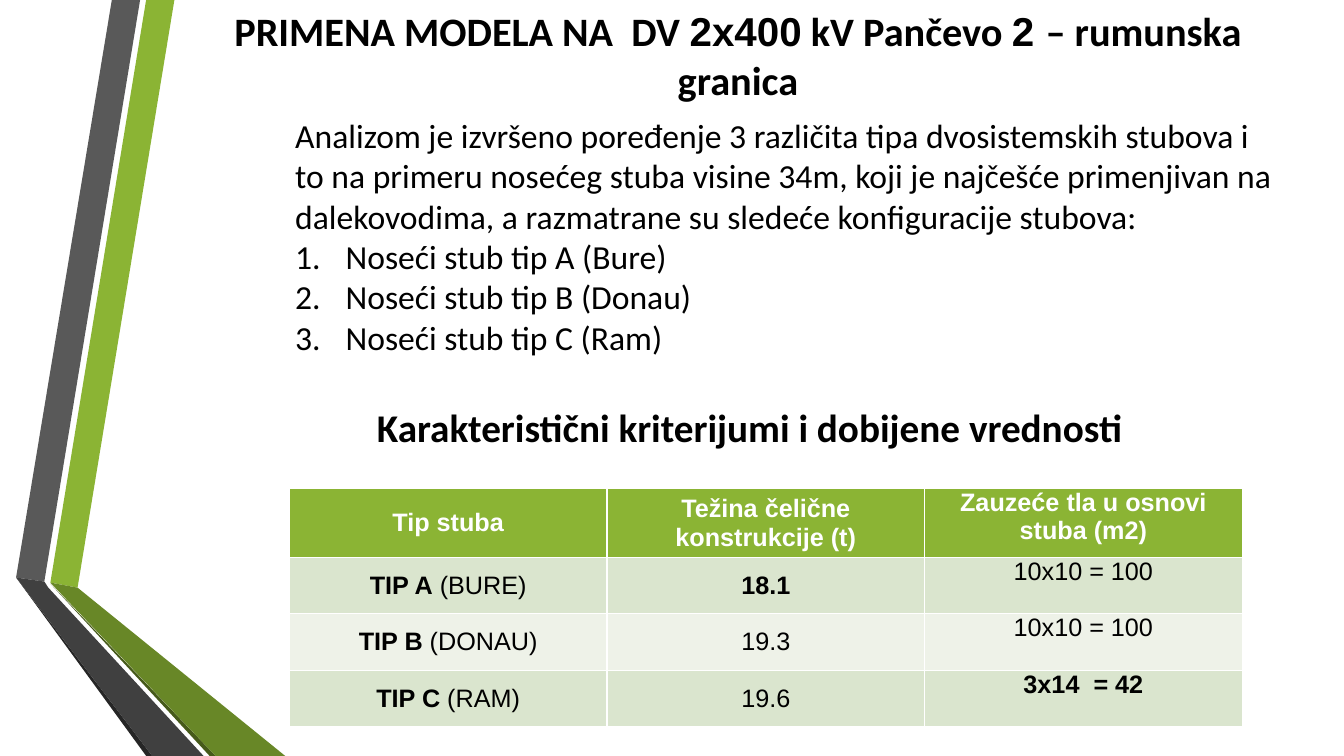
from pptx import Presentation
from pptx.dml.color import RGBColor
from pptx.enum.text import MSO_ANCHOR as Anchor, MSO_AUTO_SIZE as AutoSize, PP_ALIGN as Align
from pptx.util import Pt

PX = 9144
BLACK = RGBColor(0x00, 0x00, 0x00)
WHITE = RGBColor(0xFF, 0xFF, 0xFF)
GREEN = RGBColor(0x8B, 0xB4, 0x34)
LEAF = RGBColor(0x68, 0x87, 0x27)
MOSS = RGBColor(0x46, 0x5A, 0x1A)
GRAY = RGBColor(0x59, 0x59, 0x59)
CHARCOAL = RGBColor(0x40, 0x40, 0x40)
SOOT = RGBColor(0x26, 0x26, 0x26)
BAND_DARK = RGBColor(0xDA, 0xE5, 0xCE)
BAND_LIGHT = RGBColor(0xEE, 0xF2, 0xE8)

RIBBONS = [
    (GREEN, [(50, 578), (77, 583), (173, 0), (145, 0)]),
    (GRAY, [(139, 0), (111, 0), (16, 573), (44, 577)]),
    (SOOT, [(16, 573), (145, 750), (151, 750)]),
    (MOSS, [(50, 579), (208, 750), (214, 750)]),
    (LEAF, [(50, 578), (214, 750), (283, 750), (77, 583)]),
    (CHARCOAL, [(202, 750), (48, 583), (44, 577), (16, 573), (151, 750)]),
]

TITLE = [
    ("PRIMENA MODELA NA  DV ", "Calibri"),
    ("2x400", "Arial"),
    (" kV Pančevo ", "Calibri"),
    ("2 ", "Arial"),
    ("– rumunska granica", "Calibri"),
]

ANALYSIS = [
    "Analizom je izvršeno poređenje 3 različita tipa dvosistemskih stubova i to na "
    "primeru nosećeg stuba visine 34m, koji je najčešće primenjivan na dalekovodima, "
    "a razmatrane su sledeće konfiguracije stubova:",
    "1.\tNoseći stub tip A (Bure)",
    "2.\tNoseći stub tip B (Donau)",
    "3.\tNoseći stub tip C (Ram)",
]

CRITERIA = [
    [[("Tip stuba", True)], [("Težina čelične konstrukcije (t)", True)],
     [("Zauzeće tla u osnovi stuba (m2)", True)]],
    [[("TIP A", True), (" (BURE)", False)], [("18.1", True)], [("10x10 = 100", False)]],
    [[("TIP B", True), (" (DONAU)", False)], [("19.3", False)], [("10x10 = 100", False)]],
    [[("TIP C", True), (" (RAM)", False)], [("19.6", False)], [("3x14  = 42", True)]],
]


def add_ribbon(page, color, points):
    builder = page.shapes.build_freeform(*points[0], scale=PX)
    builder.add_line_segments(points[1:], close=True)
    ribbon = builder.convert_to_shape()
    ribbon.shadow.inherit = False
    ribbon.fill.solid()
    ribbon.fill.fore_color.rgb = color
    ribbon.line.fill.background()


def add_frame(page, left, top, width, height, wrap=True):
    box = page.shapes.add_textbox(left * PX, top * PX, width * PX, height * PX)
    frame = box.text_frame
    frame.word_wrap = wrap
    return frame


def style(font, size, color, name=None, bold=None):
    font.size = Pt(size)
    font.color.rgb = color
    font.name = name
    font.bold = bold


def add_title(page):
    frame = add_frame(page, 184, 0, 1096, 109)
    frame.vertical_anchor = Anchor.MIDDLE
    para = frame.paragraphs[0]
    para.alignment = Align.CENTER
    style(para.font, 28.8, BLACK, bold=True)
    for text, name in TITLE:
        span = para.add_run()
        span.text = text
        style(span.font, 28.8, BLACK, name, True)


def add_text(page, area, lines, size, bold=False, wrap=True):
    frame = add_frame(page, *area, wrap=wrap)
    frame.auto_size = AutoSize.SHAPE_TO_FIT_TEXT
    frame.text = "\n".join(lines)
    for para in frame.paragraphs:
        style(para.font, size, BLACK, "Calibri", bold)


def fill_cell(cell, spans, fill, color, anchor):
    cell.fill.solid()
    cell.fill.fore_color.rgb = fill
    cell.margin_left = cell.margin_right = 7 * PX
    cell.margin_top = cell.margin_bottom = 0
    cell.vertical_anchor = anchor
    para = cell.text_frame.paragraphs[0]
    para.alignment = Align.CENTER
    style(para.font, 18, color, "Arial")
    for text, bold in spans:
        span = para.add_run()
        span.text = text
        style(span.font, 18, color, "Arial", bold)


def add_criteria_table(page):
    table = page.shapes.add_table(4, 3, 287 * PX, 485 * PX, 945 * PX, 236 * PX).table
    for column in table.columns:
        column.width = 315 * PX
    for r, cells in enumerate(CRITERIA):
        table.rows[r].height = (56 if r else 68) * PX
        fill = (BAND_DARK if r % 2 else BAND_LIGHT) if r else GREEN
        for c, spans in enumerate(cells):
            anchor = Anchor.TOP if c == 2 else Anchor.MIDDLE
            fill_cell(table.cell(r, c), spans, fill, BLACK if r else WHITE, anchor)


def main():
    deck = Presentation()
    deck.slide_width = 1333 * PX
    deck.slide_height = 750 * PX
    page = deck.slides.add_slide(deck.slide_layouts[6])
    for color, points in RIBBONS:
        add_ribbon(page, color, points)
    add_title(page)
    add_text(page, (283, 109, 997, 252), ANALYSIS, 24)
    add_text(page, (364, 395, 795, 57),
             ["Karakteristični kriterijumi i dobijene vrednosti"], 28, bold=True, wrap=False)
    add_criteria_table(page)
    deck.save("out.pptx")


if __name__ == "__main__":
    main()
